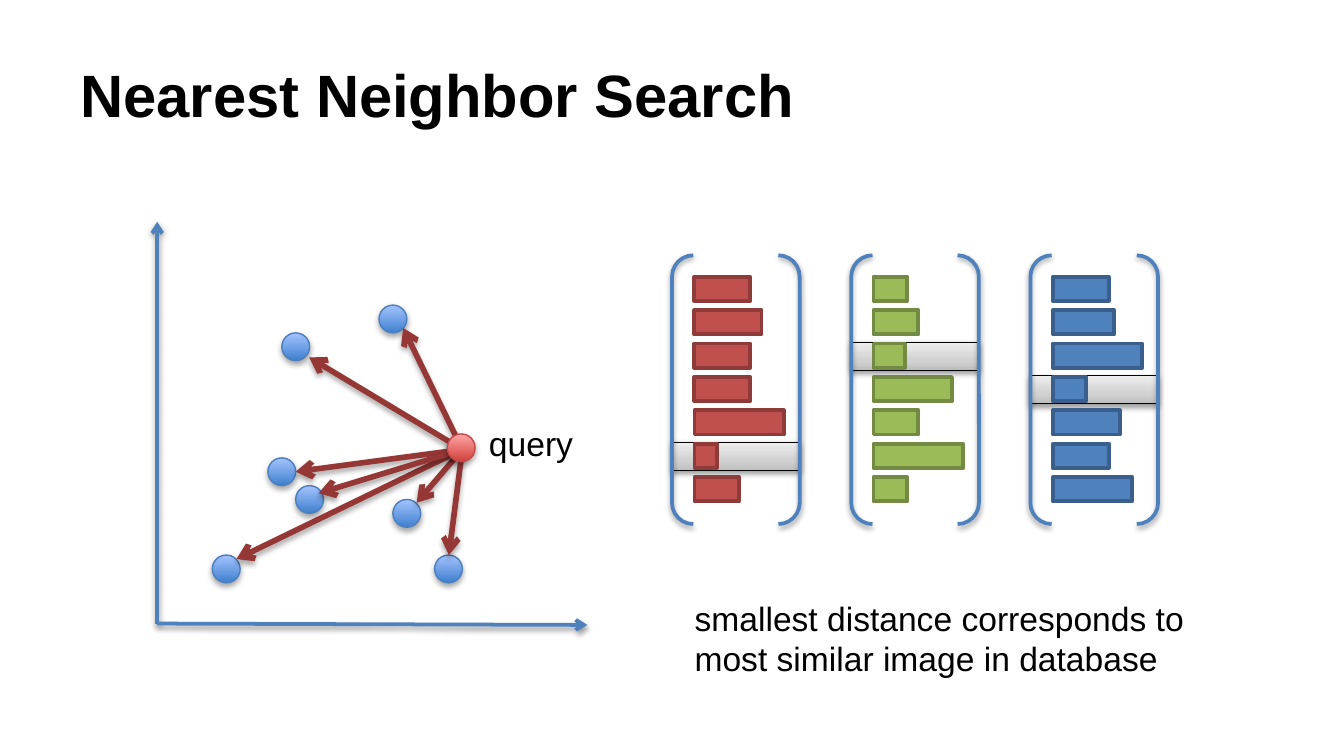
from copy import deepcopy
from dataclasses import dataclass

from lxml import etree
from pptx import Presentation
from pptx.dml.color import RGBColor
from pptx.enum.shapes import MSO_CONNECTOR, MSO_SHAPE
from pptx.enum.text import MSO_ANCHOR
from pptx.oxml.ns import qn
from pptx.util import Inches, Pt

RECT, OVAL, PAIR = MSO_SHAPE.RECTANGLE, MSO_SHAPE.OVAL, MSO_SHAPE.DOUBLE_BRACKET
LINE = MSO_CONNECTOR.STRAIGHT
MID, TOP = MSO_ANCHOR.MIDDLE, MSO_ANCHOR.TOP

HEX = {
    "black": "000000", "axis": "4F81BD", "arrow": "953735",
    "red": "C0504D", "red edge": "8E3B39",
    "green": "9BBB59", "green edge": "738A42",
    "blue": "4F81BD", "blue edge": "3A5F8C",
    "dot edge": "4B7EBC", "query edge": "BF4C48",
}
FADE = {
    "band": ((0, "BDBDBD"), (0.35, "D1D1D1"), (1, "EEEEEE")),
    "dot": ((0, "3F80CE"), (1, "A4C4FF")),
    "query": ((0, "D1403C"), (1, "FFA6A5")),
}
SOFT, DEEP = (35, 1.8), (38, 1.6)

WIDE = 10
HIGH = WIDE * 9 / 16
UNIT = 0.31 / 3
LEFT, UP = 1.58, 2.27
STEP = 1 / 12
PITCH = 4 / 3
ROW = 1.49 / 6


@dataclass
class Point:
    col: float
    row: float
    tip: tuple[float, float]


@dataclass
class Vector:
    hue: str
    bars: tuple[float, ...]
    hit: int


@dataclass
class Label:
    lines: tuple[str, ...]
    box: tuple[float, float, float, float]
    font: dict
    wrap: bool
    anchor: MSO_ANCHOR


POINTS = (
    Point(12, 0, (13.74, 1.65)), Point(5, 2, (6.97, 3.77)),
    Point(13, 14, (14.71, 14.23)), Point(4, 11, (6, 12)),
    Point(0, 18, (1.74, 18.29)), Point(16, 18, (17.03, 18)),
    Point(6, 13, (7.65, 13.55)),
)
QUERY = Point(16.92, 9.28, (18, 10.4))
VECTORS = (
    Vector("red", (5, 6, 5, 5, 8, 2, 4), 5),
    Vector("green", (3, 4, 2.8, 7, 4, 8, 3), 2),
    Vector("blue", (5, 5.5, 8, 3, 6, 5, 7.1), 3),
)
BODY = {"name": "Arial", "size": Pt(18)}
LABELS = (
    Label(("Nearest Neighbor Search",), (0.5, 0.23, 9, 0.94),
          {"name": "Arial", "size": Pt(32), "bold": True}, True, MID),
    Label(("query",), (3.54, 3.1, 0.83, 0.4), BODY, False, TOP),
    Label(("smallest distance corresponds to", "most similar image in database"),
          (5.07, 4.4, 3.88, 0.71), BODY, False, TOP),
)


def rgb(name: str) -> RGBColor:
    return RGBColor.from_string(HEX[name])


def shade(props, look: tuple | None) -> None:
    for old in props.findall(qn("a:effectLst")):
        props.remove(old)
    effect = etree.SubElement(props, qn("a:effectLst"))
    if look:
        alpha, dist = look
        cast = etree.SubElement(
            effect, qn("a:outerShdw"), blurRad=str(Pt(3.1)), dist=str(Pt(dist)),
            dir="5400000", rotWithShape="0")
        tone = etree.SubElement(cast, qn("a:srgbClr"), val=HEX["black"])
        etree.SubElement(tone, qn("a:alpha"), val=str(alpha * 1000))


def blend(shape, stops: tuple) -> None:
    shape.fill.gradient()
    shape.fill.gradient_angle = 90
    marks = next(shape._element.iter(qn("a:gsLst")))
    for _ in stops[2:]:
        marks.append(deepcopy(marks[0]))
    for mark, (spot, tone) in zip(shape.fill.gradient_stops, stops):
        mark.position = spot
        mark.color.rgb = RGBColor.from_string(tone)


def draw(home, kind, box: tuple, fill: str | None, edge: str,
         width: float, look: tuple | None = None) -> None:
    shape = home.add_shape(kind, *map(Inches, box))
    if fill is None:
        shape.fill.background()
    elif fill in FADE:
        blend(shape, FADE[fill])
    else:
        shape.fill.solid()
        shape.fill.fore_color.rgb = rgb(fill)
    shape.line.color.rgb = rgb(edge)
    shape.line.width = Pt(width)
    shade(shape._element.spPr, look)


def link(home, start: tuple, end: tuple, tone: str, width: float, look: tuple) -> None:
    line = home.add_connector(LINE, *map(Inches, (*start, *end)))
    line.line.color.rgb = rgb(tone)
    line.line.width = Pt(width)
    props = line._element.spPr
    etree.SubElement(props.find(qn("a:ln")), qn("a:tailEnd"), type="arrow")
    shade(props, look)


def place(col: float, row: float) -> tuple[float, float]:
    return LEFT + col * UNIT, UP + row * UNIT


def dot(home, point: Point, fill: str) -> None:
    box = (*place(point.col, point.row), 2 * UNIT, 2 * UNIT)
    draw(home, OVAL, box, fill, f"{fill} edge", 0.75, SOFT)


def plot(home) -> None:
    for end in ((1.17, 1.65), (4.37, 4.65)):
        link(home, (1.17, 4.64), end, "axis", 2, DEEP)
    for point in POINTS:
        dot(home, point, "dot")
    for point in POINTS:
        link(home, place(*QUERY.tip), place(*point.tip), "arrow", 3, SOFT)
    dot(home, QUERY, "query")


def stack(home, vector: Vector, left: float) -> None:
    top = 2.06
    band = (left, top + vector.hit * ROW - 0.01, 0.95, 0.21)
    draw(home, RECT, band, "band", "black", 0.75, DEEP)
    group = home.add_group_shape().shapes
    draw(group, PAIR, (left, 1.9, 0.95, 2), None, "axis", 2, DEEP)
    for row, size in enumerate(vector.bars):
        box = (left + 2 * STEP, top + row * ROW, size * STEP, 0.18)
        draw(group, RECT, box, vector.hue, f"{vector.hue} edge", 2)


def write(home, label: Label) -> None:
    frame = home.add_textbox(*map(Inches, label.box)).text_frame
    frame.word_wrap = label.wrap
    frame.vertical_anchor = label.anchor
    frame.text = "\n".join(label.lines)
    for para in frame.paragraphs:
        for run in para.runs:
            for key, value in label.font.items():
                setattr(run.font, key, value)
            run.font.color.rgb = rgb("black")


def main() -> None:
    deck = Presentation()
    deck.slide_width, deck.slide_height = Inches(WIDE), Inches(HIGH)
    home = deck.slides.add_slide(deck.slide_layouts[6]).shapes
    plot(home)
    for index, vector in enumerate(VECTORS):
        stack(home, vector, WIDE / 2 + index * PITCH)
    for label in LABELS:
        write(home, label)
    deck.save("out.pptx")


if __name__ == "__main__":
    main()
